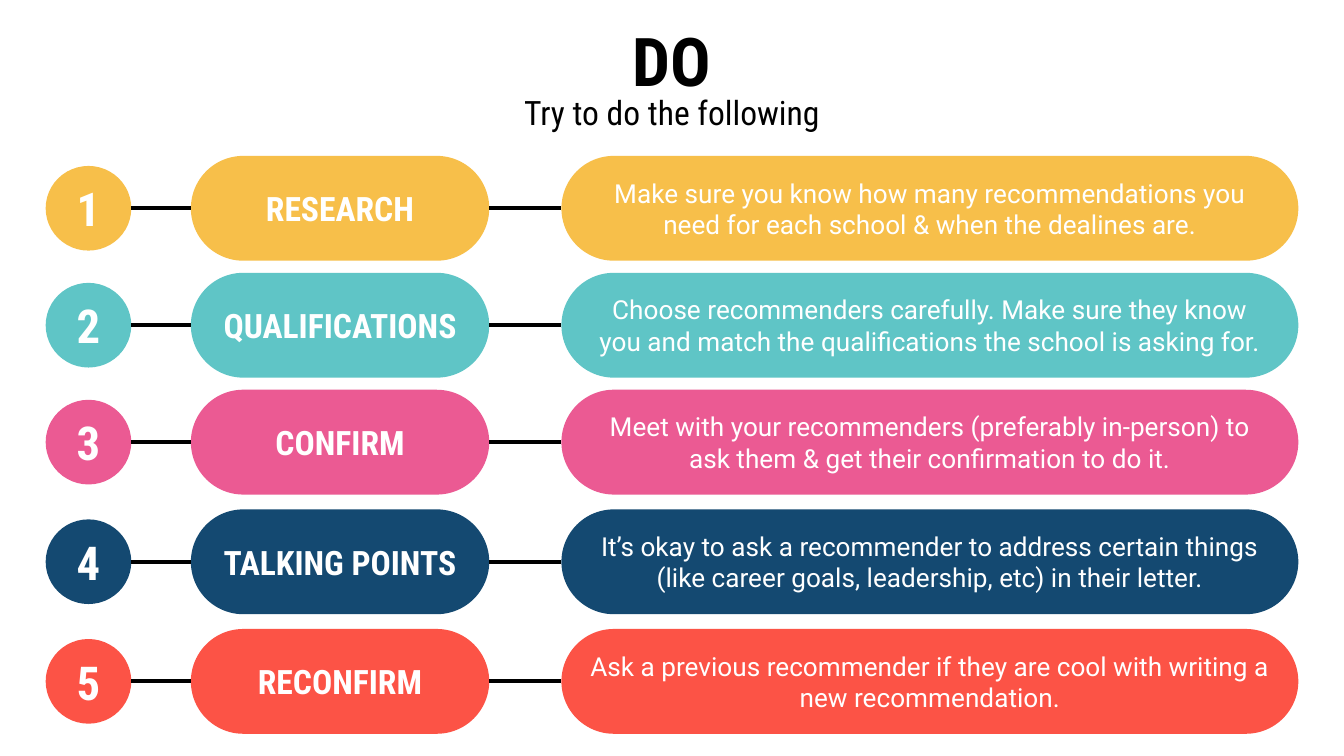
from dataclasses import dataclass

from lxml import etree
from pptx import Presentation, util as u
from pptx.dml.color import RGBColor
from pptx.enum import shapes, text
from pptx.oxml import ns

# Widescreen, 16:9
WIDTH = u.Inches(10)
HEIGHT = u.Emu(WIDTH * 9 // 16)

BLACK = RGBColor(0x00, 0x00, 0x00)
WHITE = RGBColor(0xFF, 0xFF, 0xFF)
YELLOW = RGBColor(0xF7, 0xBF, 0x4A)
TEAL = RGBColor(0x5F, 0xC5, 0xC6)
PINK = RGBColor(0xEB, 0x5A, 0x93)
NAVY = RGBColor(0x14, 0x49, 0x71)
RED = RGBColor(0xFC, 0x53, 0x46)

CONDENSED, REGULAR = "Roboto Condensed", "Roboto"


@dataclass(frozen=True)
class Style:
    size: float
    font: str
    color: RGBColor
    bold: bool = False


@dataclass(frozen=True)
class Column:
    """Left edge and width in percent of the slide width, height in inches."""
    left: float
    width: float
    height: float
    preset: shapes.MSO_SHAPE
    style: Style


@dataclass(frozen=True)
class Step:
    heading: str
    advice: str
    color: RGBColor
    gap: float  # distance from the middle of the row above, in inches


TITLE = Style(36, CONDENSED, BLACK, True)
SUBTITLE = Style(18, CONDENSED, BLACK)

OVAL, PILL = shapes.MSO_SHAPE.OVAL, shapes.MSO_SHAPE.ROUNDED_RECTANGLE
NUMBER = Column(3.4, 6.37, 0.63, OVAL, Style(25, CONDENSED, WHITE, True))
HEADING = Column(14.2, 22.2, 0.78, PILL, Style(18, CONDENSED, WHITE, True))
ADVICE = Column(41.77, 54.83, 0.78, PILL, Style(14, REGULAR, WHITE))

STEPS = [
    Step("RESEARCH", "Make sure you know how many recommendations you need "
         "for each school & when the dealines are.", YELLOW, 1.55),
    Step("QUALIFICATIONS", "Choose recommenders carefully. Make sure they know "
         "you and match the qualifications the school is asking for.", TEAL, 0.87),
    Step("CONFIRM", "Meet with your recommenders (preferably in-person) to "
         "ask them & get their confirmation to do it.", PINK, 0.87),
    Step("TALKING POINTS", "It’s okay to ask a recommender to address certain things "
         "(like career goals, leadership, etc) in their letter.", NAVY, 0.89),
    Step("RECONFIRM", "Ask a previous recommender if they are cool with writing a "
         "new recommendation.", RED, 0.89),
]


def across(percent: float) -> int:
    return round(WIDTH * percent / 100)


def down(percent: float) -> int:
    return round(HEIGHT * percent / 100)


def write(shape, words: str, style: Style, anchor) -> None:
    frame = shape.text_frame
    frame.word_wrap = True
    frame.vertical_anchor = anchor
    frame.margin_left = frame.margin_right = u.Inches(0.1)
    frame.margin_top = frame.margin_bottom = u.Inches(0.1)
    paragraph = frame.paragraphs[0]
    paragraph.alignment = text.PP_ALIGN.CENTER
    run = paragraph.add_run()
    run.text = words
    run.font.size = u.Pt(style.size)
    run.font.name = style.font
    run.font.bold = style.bold
    run.font.color.rgb = style.color


def add_label(slide, top: float, width: float, height: float,
              words: str, style: Style) -> None:
    """Add a horizontally centred text box, measured in percent of the slide."""
    box = slide.shapes.add_textbox(across((100 - width) / 2), down(top),
                                   across(width), down(height))
    write(box, words, style, text.MSO_ANCHOR.TOP)


def add_cell(slide, column: Column, middle: int, color: RGBColor, words: str):
    height = u.Inches(column.height)
    shape = slide.shapes.add_shape(column.preset, across(column.left),
                                   middle - height // 2,
                                   across(column.width), height)
    if column.preset == PILL:
        shape.adjustments[0] = 0.5
    shape.shadow.inherit = False
    shape.fill.solid()
    shape.fill.fore_color.rgb = color
    shape.line.fill.background()
    write(shape, words, column.style, text.MSO_ANCHOR.MIDDLE)
    return shape


def add_link(slide, start, end, middle: int) -> None:
    link = slide.shapes.add_connector(shapes.MSO_CONNECTOR.STRAIGHT,
                                      start.left + start.width, middle,
                                      end.left, middle)
    if start.auto_shape_type == PILL:
        link.begin_connect(start, 3)
    link.end_connect(end, 1)
    link.line.color.rgb = BLACK
    link.line.width = u.Pt(2.25)
    etree.SubElement(link.element.spPr, ns.qn("a:effectLst"))


def main() -> None:
    presentation = Presentation()
    presentation.slide_width, presentation.slide_height = WIDTH, HEIGHT
    slide = presentation.slides.add_slide(presentation.slide_layouts[6])

    # Title and subtitle
    add_label(slide, 0.8, 93.2, 11.2, "DO", TITLE)
    add_label(slide, 10.4, 52.2, 6.8, "Try to do the following", SUBTITLE)

    # One row per step: number, heading and advice, linked by lines
    middle = 0
    for number, step in enumerate(STEPS, start=1):
        middle += u.Inches(step.gap)
        circle = add_cell(slide, NUMBER, middle, step.color, str(number))
        heading = add_cell(slide, HEADING, middle, step.color, step.heading)
        advice = add_cell(slide, ADVICE, middle, step.color, step.advice)
        add_link(slide, circle, heading, middle)
        add_link(slide, heading, advice, middle)

    presentation.save("out.pptx")


if __name__ == "__main__":
    main()
